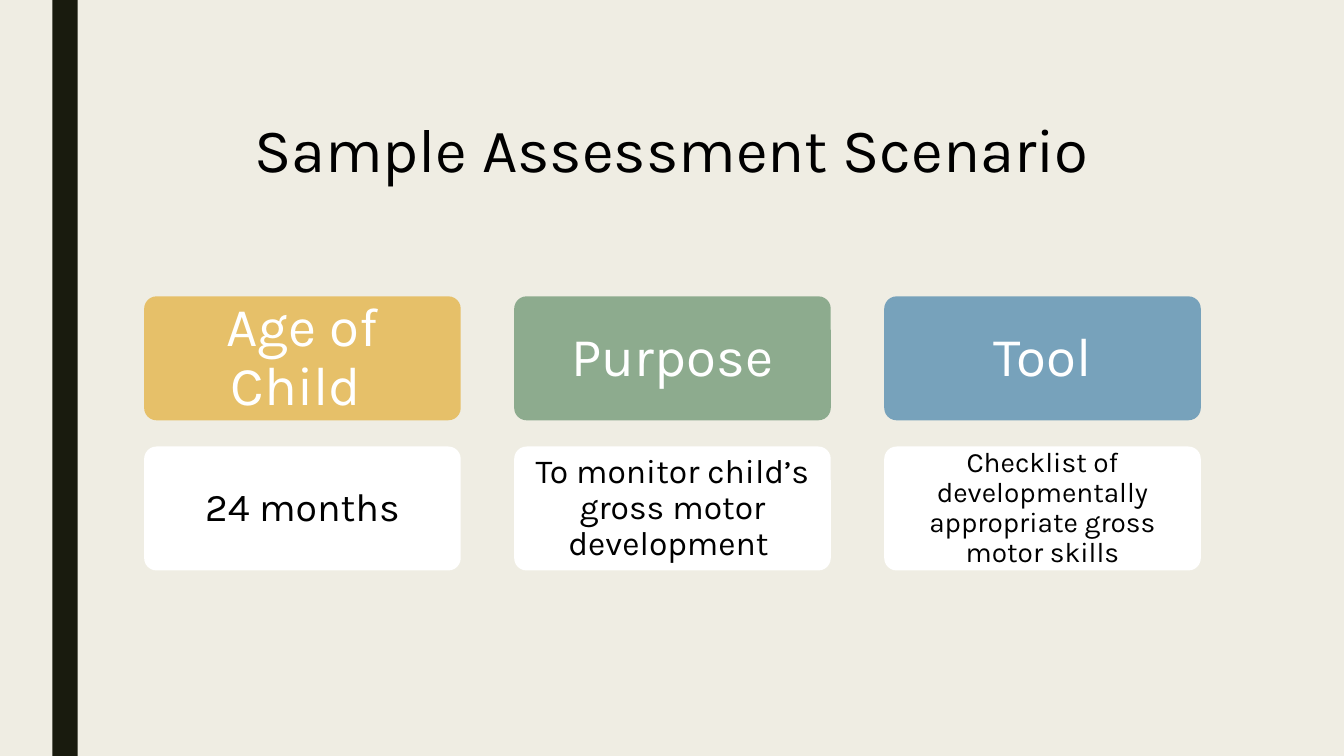
from pptx import Presentation
from pptx.dml.color import RGBColor
from pptx.enum.shapes import MSO_SHAPE
from pptx.enum.text import MSO_ANCHOR, MSO_AUTO_SIZE, PP_ALIGN
from pptx.util import Inches, Pt

HUES = {
    "back": "EFEDE3",
    "bar": "191B0E",
    "gold": "E6C069",
    "green": "8DAB8E",
    "blue": "77A2BB",
    "white": "FFFFFF",
    "black": "000000",
}


class Page:
    font = "Karla"

    def __init__(self, deck):
        self.slide = deck.slides.add_slide(deck.slide_layouts[5])
        self.paint(self.slide.background.fill, "back")

    def paint(self, fill, hue):
        fill.solid()
        fill.fore_color.rgb = RGBColor.from_string(HUES[hue])

    def label(self, frame, text, size, hue, inset, anchor):
        frame.word_wrap = True
        frame.vertical_anchor = anchor
        frame.margin_left = frame.margin_right = Inches(inset[0])
        frame.margin_top = frame.margin_bottom = Inches(inset[1])
        para = frame.paragraphs[0]
        para.alignment = PP_ALIGN.CENTER
        run = para.add_run()
        run.text = text
        run.font.name = self.font
        run.font.size = Pt(size)
        run.font.color.rgb = RGBColor.from_string(HUES[hue])
        return para

    def title(self, text, left, top, width, height):
        head = self.slide.shapes.title
        head.left, head.top = Inches(left), Inches(top)
        head.width, head.height = Inches(width), Inches(height)
        self.label(head.text_frame, text, 44, "black", (0.1, 0.05), MSO_ANCHOR.TOP)
        head.text_frame.auto_size = MSO_AUTO_SIZE.SHAPE_TO_FIT_TEXT

    def block(self, kind, left, top, width, height, hue):
        shape = self.slide.shapes.add_shape(
            kind, Inches(left), Inches(top), Inches(width), Inches(height)
        )
        shape.shadow.inherit = False
        self.paint(shape.fill, hue)
        shape.line.fill.background()
        return shape

    def card(self, left, top, fill, text, size, hue, inset):
        shape = self.block(MSO_SHAPE.ROUNDED_RECTANGLE, left, top, 3.14, 1.23, fill)
        shape.adjustments[0] = 0.1
        para = self.label(
            shape.text_frame, text, size, hue, (inset, inset), MSO_ANCHOR.MIDDLE
        )
        para.line_spacing = 0.9


def main():
    deck = Presentation()
    deck.slide_width, deck.slide_height = Inches(13.33), Inches(7.5)
    page = Page(deck)
    page.block(MSO_SHAPE.RECTANGLE, 0.52, 0, 0.25, 7.5, "bar")
    page.title("Sample Assessment Scenario", 1.42, 1.05, 10.49, 0.84)

    cards = [
        ("gold", "Age of Child ", "24 months", 28, 0.12),
        ("green", "Purpose", "To monitor child’s gross motor development ", 24, 0.1),
        (
            "blue",
            "Tool",
            "Checklist of developmentally appropriate gross motor skills",
            20,
            0.08,
        ),
    ]
    for col, (hue, head, body, size, inset) in enumerate(cards):
        left = 1.43 + col * 3.67
        page.card(left, 2.94, hue, head, 39, "white", 0.16)
        page.card(left, 4.43, "white", body, size, "black", inset)

    deck.save("out.pptx")


if __name__ == "__main__":
    main()
